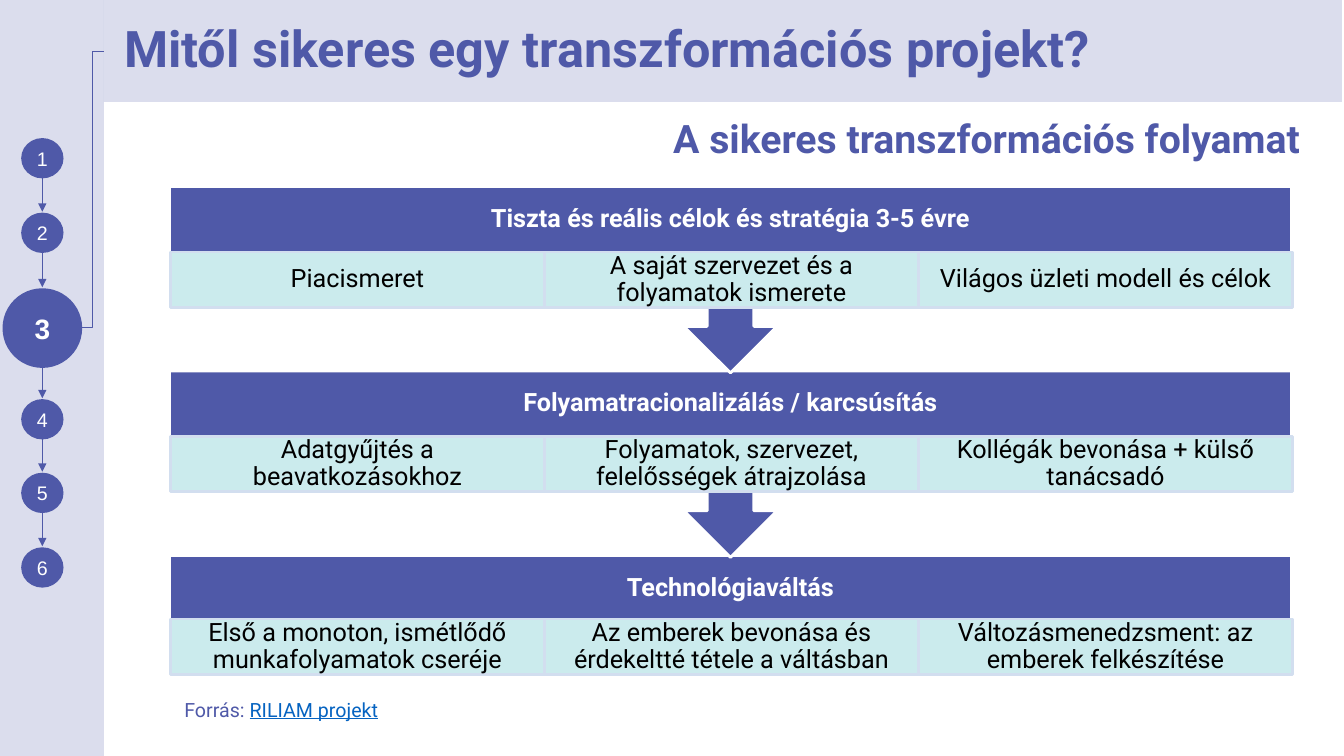
from lxml import etree
from pptx import Presentation
from pptx.dml.color import RGBColor
from pptx.enum.shapes import MSO_CONNECTOR, MSO_SHAPE
from pptx.enum.text import MSO_ANCHOR, PP_ALIGN
from pptx.oxml.ns import qn
from pptx.util import Inches, Pt

CENTER, RIGHT, LEFT = PP_ALIGN.CENTER, PP_ALIGN.RIGHT, PP_ALIGN.LEFT
MIDDLE, TOP = MSO_ANCHOR.MIDDLE, MSO_ANCHOR.TOP
RECTANGLE, OVAL = MSO_SHAPE.RECTANGLE, MSO_SHAPE.OVAL
CALLOUT = MSO_SHAPE.UP_ARROW_CALLOUT
STRAIGHT, ELBOW = MSO_CONNECTOR.STRAIGHT, MSO_CONNECTOR.ELBOW

# Content
TITLE = "Mitől sikeres egy transzformációs projekt?"
SUBTITLE = "A sikeres transzformációs folyamat"
SOURCE_LABEL, SOURCE_NAME = "Forrás: ", "RILIAM projekt"
STAGES = [
    ("Tiszta és reális célok és stratégia 3-5 évre",
     ["Piacismeret", "A saját szervezet és a folyamatok ismerete",
      "Világos üzleti modell és célok"]),
    ("Folyamatracionalizálás / karcsúsítás",
     ["Adatgyűjtés a beavatkozásokhoz",
      "Folyamatok, szervezet, felelősségek átrajzolása",
      "Kollégák bevonása + külső tanácsadó"]),
    ("Technológiaváltás",
     ["Első a monoton, ismétlődő munkafolyamatok cseréje",
      "Az emberek bevonása és érdekeltté tétele a váltásban",
      "Változásmenedzsment: az emberek felkészítése"]),
]
STEP_TOPS = [1.37, 2.11, 2.86, 3.96, 4.69, 5.43]
CURRENT_STEP = 3

COLORS = {"indigo": "4F59A8", "mint": "CBEBED", "cell_line": "D2DEEF",
          "white": "FFFFFF", "black": "000000", "link": "0563C1"}

# Layout in inches
SIDEBAR_WIDTH = 1.03
STEP_CENTER = 0.42
STEP_SIZE, CURRENT_SIZE = (0.42, 0.4), (0.79, 0.79)
STAGE_LEFT, STAGE_TOP, STAGE_WIDTH, STAGE_PITCH = 1.68, 1.85, 11.13, 1.83
CALLOUT_HEIGHT, LAST_HEIGHT, HEADER_HEIGHT = 1.85, 1.2, 0.65
CELL_LEFT, CELL_WIDTH, CELL_HEIGHT = 1.69, 3.71, 0.55


def rgb(name):
    return RGBColor.from_string(COLORS[name])


def set_fill(shape, color, alpha=None):
    shape.fill.solid()
    shape.fill.fore_color.rgb = rgb(color)
    if alpha:
        fill_color = shape.fill._xPr.find(qn("a:solidFill"))[0]
        etree.SubElement(fill_color, qn("a:alpha")).set("val", str(alpha * 1000))


def add_box(kind, box, color, line=None, alpha=None):
    shape = slide.shapes.add_shape(kind, *map(Inches, box))
    shape.shadow.inherit = False
    set_fill(shape, color, alpha)
    if line:
        shape.line.color.rgb = rgb(line)
        shape.line.width = Pt(2)
    else:
        shape.line.fill.background()
    return shape


def add_text_box(box):
    return slide.shapes.add_textbox(*map(Inches, box))


def write(shape, runs, size, font="Roboto", bold=False, align=CENTER,
          anchor=MIDDLE, spacing=0.9, insets=(0.1, 0.05)):
    frame = shape.text_frame
    frame.word_wrap = True
    frame.vertical_anchor = anchor
    frame.margin_left = frame.margin_right = Inches(insets[0])
    frame.margin_top = frame.margin_bottom = Inches(insets[1])
    paragraph = frame.paragraphs[0]
    paragraph.alignment = align
    paragraph.line_spacing = spacing
    for text, color in runs:
        run = paragraph.add_run()
        run.text = text
        run.font.name = font
        run.font.size = Pt(size)
        run.font.bold = bold
        run.font.color.rgb = rgb(color)
    return paragraph


def indent(paragraph, inches):
    properties = paragraph._p.get_or_add_pPr()
    properties.set("marL", str(Inches(inches)))
    properties.set("indent", "0")


def add_line(kind, start, end, width, arrow=False):
    connector = slide.shapes.add_connector(kind, *map(Inches, start + end))
    connector.line.color.rgb = rgb("indigo")
    connector.line.width = Pt(width)
    if arrow:
        line = connector.line._get_or_add_ln()
        etree.SubElement(line, qn("a:tailEnd")).set("type", "triangle")
    etree.SubElement(connector._element.spPr, qn("a:effectLst"))


presentation = Presentation()
presentation.slide_width = Inches(13.33)
presentation.slide_height = Inches(7.5)
slide = presentation.slides.add_slide(presentation.slide_layouts[5])

# Sidebar with numbered steps
add_box(RECTANGLE, (0, 0, SIDEBAR_WIDTH, 7.5), "indigo", alpha=20)
add_line(ELBOW, (0.81, 3.25), (SIDEBAR_WIDTH, 0.51), 0.75)
for number, top in enumerate(STEP_TOPS, start=1):
    current = number == CURRENT_STEP
    width, height = CURRENT_SIZE if current else STEP_SIZE
    circle = add_box(OVAL, (STEP_CENTER - width / 2, top, width, height), "indigo")
    write(circle, [(str(number), "white")], 20 if current else 14, "Arial",
          bold=current, spacing=1, insets=(0, 0))
    if number < len(STEP_TOPS):
        add_line(STRAIGHT, (STEP_CENTER, top + height),
                 (STEP_CENTER, STEP_TOPS[number] - 0.01), 1, arrow=True)

# Title and subtitle
title = slide.shapes.title
title.left, title.top = Inches(SIDEBAR_WIDTH), Inches(0)
title.width, title.height = Inches(12.28), Inches(1.01)
set_fill(title, "indigo", alpha=20)
indent(write(title, [(TITLE, "indigo")], 36, bold=True, align=LEFT), 0.1)
write(add_text_box((1.18, 0.95, 11.81, 0.9)), [(SUBTITLE, "indigo")], 28,
      bold=True, align=RIGHT)

# Stages, drawn from the last so that each arrow lies over the next stage
for index in reversed(range(len(STAGES))):
    heading, cells = STAGES[index]
    top = STAGE_TOP + index * STAGE_PITCH
    cell_top = top + HEADER_HEIGHT
    if index == len(STAGES) - 1:
        cell_top -= 0.02
        add_box(RECTANGLE, (STAGE_LEFT, top, STAGE_WIDTH, LAST_HEIGHT),
                "indigo", "white")
    else:
        callout = add_box(CALLOUT, (STAGE_LEFT, top, STAGE_WIDTH, CALLOUT_HEIGHT),
                          "indigo", "white")
        callout.rotation = 180
    write(add_text_box((STAGE_LEFT, top, STAGE_WIDTH, HEADER_HEIGHT)),
          [(heading, "white")], 18, bold=True, insets=(0.14, 0.14))
    for column, text in enumerate(cells):
        cell = add_box(RECTANGLE, (CELL_LEFT + column * CELL_WIDTH, cell_top,
                                   CELL_WIDTH, CELL_HEIGHT), "mint", "cell_line")
        write(cell, [(text, "black")], 18, insets=(0.14, 0.03))

# Source line
source = write(add_text_box((1.61, 6.87, 4.3, 0.73)),
               [(SOURCE_LABEL, "indigo"), (SOURCE_NAME, "link")], 14,
               align=LEFT, anchor=TOP, spacing=1)
indent(source, 0.12)
source.runs[1].font.underline = True

presentation.save("out.pptx")
